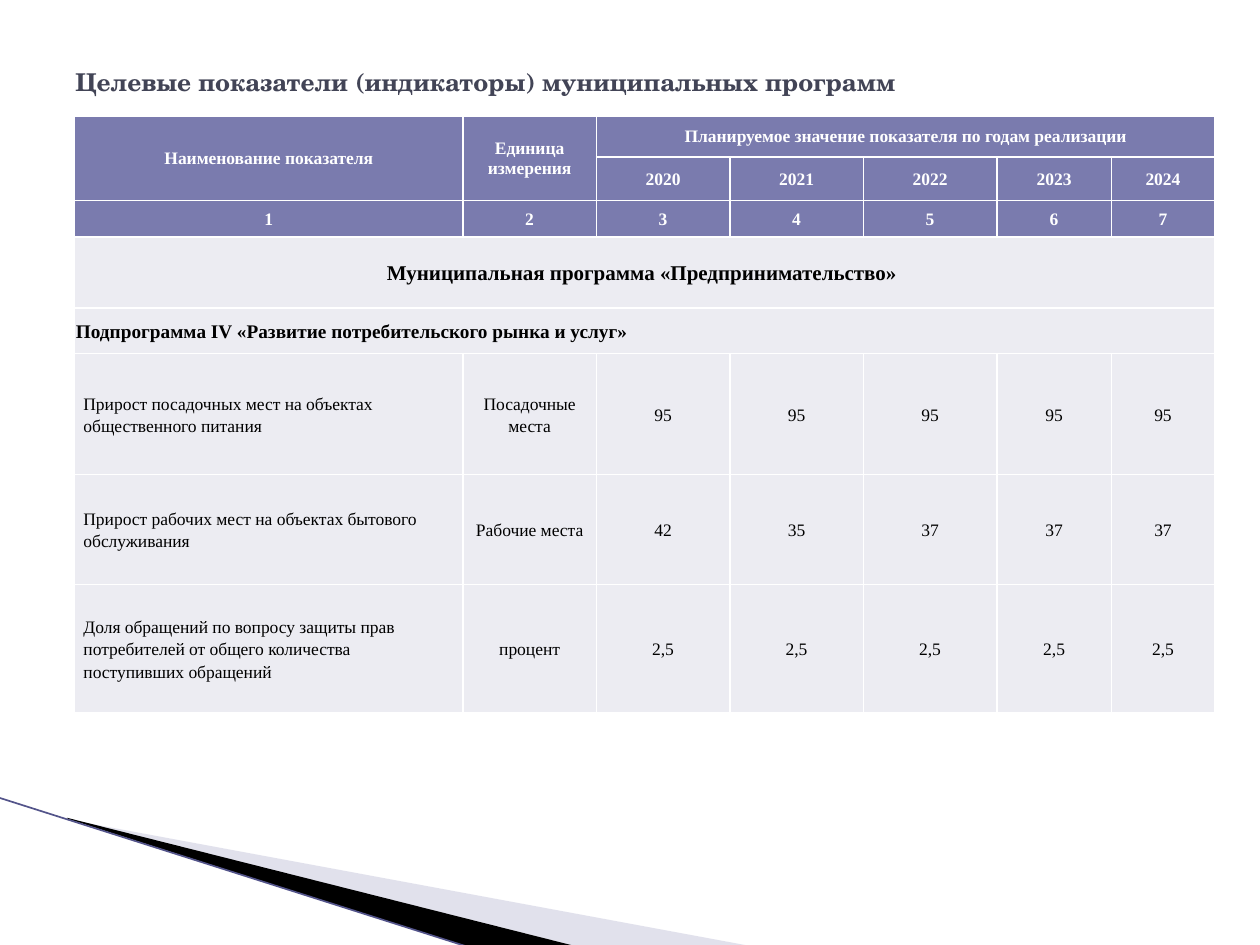
"""Build a slide with a table of target indicators for a municipal programme."""
from dataclasses import dataclass

from lxml import etree
from pptx import Presentation
from pptx import util as u
from pptx.dml.color import RGBColor
from pptx.enum import shapes, text
from pptx.oxml import ns


@dataclass(frozen=True)
class Theme:
    serif: str = "Times New Roman"
    display: str = "TeX Gyre Schola"
    title: str = "424456"
    head: str = "7A7BAE"
    pale: str = "ECECF2"
    white: str = "FFFFFF"
    black: str = "000000"
    wedge: str = "B6B6D1"
    edge: str = "53548A"
    large: float = 14
    mid: float = 12
    sub: float = 11
    small: float = 10


def add(root, tag, **attrs):
    return etree.SubElement(root, ns.qn(tag), attrs)


class Page:
    def __init__(self, slide, theme):
        self.slide, self.theme = slide, theme

    def style(self, para, size, color, bold=True, face=None):
        font = para.font
        font.name, font.size, font.bold = face or self.theme.serif, u.Pt(size), bold
        font.color.rgb = RGBColor.from_string(color)

    def title(self, words, left, top, width, height):
        box = self.slide.shapes.add_textbox(*map(u.Pt, (left, top, width, height)))
        frame = box.text_frame
        frame.word_wrap = True
        frame.vertical_anchor = text.MSO_ANCHOR.MIDDLE
        frame.text = words
        self.style(frame.paragraphs[0], self.theme.large, self.theme.title,
                   face=self.theme.display)

    def wedge(self, points, color, alpha=None):
        start, *rest = [(u.Pt(x), u.Pt(y)) for x, y in points]
        outline = self.slide.shapes.build_freeform(*start, scale=1)
        shape = outline.add_line_segments(rest, close=True).convert_to_shape()
        shape.shadow.inherit = False
        shape.line.fill.background()
        shape.fill.solid()
        shape.fill.fore_color.rgb = RGBColor.from_string(color)
        if alpha:
            tint = shape._element.spPr.find(".//" + ns.qn("a:srgbClr"))
            add(tint, "a:alpha", val=str(alpha * 1000))

    def line(self, start, end, color, width):
        rule = self.slide.shapes.add_connector(
            shapes.MSO_CONNECTOR.STRAIGHT, *map(u.Pt, start + end))
        rule.line.color.rgb = RGBColor.from_string(color)
        rule.line.width = u.Pt(width)
        add(rule._element.spPr, "a:effectLst")

    def table(self, left, top, widths, heights):
        frame = self.slide.shapes.add_table(
            len(heights), len(widths), u.Pt(left), u.Pt(top),
            u.Pt(sum(widths)), u.Pt(sum(heights)))
        grid = frame.table
        for col, width in zip(grid.columns, widths):
            col.width = u.Pt(width)
        for row, height in zip(grid.rows, heights):
            row.height = u.Pt(height)
        return grid

    def cell(self, cell, fill, body=False):
        side = 5 if body else 0.7
        cell.margin_left = cell.margin_right = u.Pt(side)
        cell.margin_top, cell.margin_bottom = u.Pt(0 if body else 0.7), 0
        cell.vertical_anchor = text.MSO_ANCHOR.MIDDLE
        props = cell._tc.get_or_add_tcPr()
        for edge in ("a:lnL", "a:lnR", "a:lnT", "a:lnB"):
            rule = add(props, edge, w=str(u.Pt(1)))
            add(add(rule, "a:solidFill"), "a:srgbClr", val=self.theme.white)
        cell.fill.solid()
        cell.fill.fore_color.rgb = RGBColor.from_string(fill)

    def label(self, cell, words, size, color, bold=True, left=False, body=False):
        cell.text = words
        para = cell.text_frame.paragraphs[0]
        para.alignment = text.PP_ALIGN.LEFT if left else text.PP_ALIGN.CENTER
        if body:
            para.line_spacing, para.space_after = 1.15, u.Pt(10)
        self.style(para, size, color, bold)


WIDTHS = [221.8, 76.3, 76.3, 76.3, 76.3, 65.5, 59]
HEIGHTS = [23.6, 23, 21, 40.6, 26, 69.2, 62.6, 73.6]
SPANS = [(0, 0, 1, 0), (0, 1, 1, 1), (0, 2, 0, 6), (3, 0, 3, 6), (4, 0, 4, 6)]
ROWS = [
    ["Наименование показателя", "Единица измерения",
     "Планируемое значение показателя по годам реализации"],
    ["", "", "2020", "2021", "2022", "2023", "2024"],
    ["1", "2", "3", "4", "5", "6", "7"],
    ["Муниципальная программа «Предпринимательство» "],
    ["Подпрограмма IV «Развитие потребительского рынка и услуг»"],
    ["Прирост посадочных мест на объектах общественного питания",
     "Посадочные места"] + ["95"] * 5,
    ["Прирост рабочих мест на объектах бытового обслуживания",
     "Рабочие места", "42", "35", "37", "37", "37"],
    ["Доля обращений по вопросу защиты прав потребителей от общего "
     "количества поступивших обращений", "процент"] + ["2,5"] * 5,
]


def main():
    deck = Presentation()
    deck.slide_width, deck.slide_height = u.Pt(720), u.Pt(540)
    theme = Theme()
    page = Page(deck.slides.add_slide(deck.slide_layouts[6]), theme)

    page.wedge([(39.6, 468.5), (428.4, 540.5), (328.3, 540.5), (39.6, 468)],
               theme.wedge, 40)
    page.wedge([(38.2, 467.3), (329, 540.7), (267.8, 541.2), (38.9, 468)],
               theme.black)
    page.line((-0.7, 455.8), (267.8, 541.2), theme.edge, 0.95)
    page.title("Целевые показатели (индикаторы) муниципальных программ",
               36, 21.6, 648, 49.7)

    grid = page.table(42.7, 66.2, WIDTHS, HEIGHTS)
    for top, left, low, right in SPANS:
        grid.cell(top, left).merge(grid.cell(low, right))
    sizes = {3: theme.mid, 4: theme.sub}
    for r in range(len(HEIGHTS)):
        head, body = r < 3, r > 4
        for c in range(len(WIDTHS)):
            page.cell(grid.cell(r, c), theme.head if head else theme.pale, body)
        for c, words in enumerate(ROWS[r]):
            if words:
                page.label(grid.cell(r, c), words, sizes.get(r, theme.small),
                           theme.white if head else theme.black,
                           bold=not body, left=r > 3 and c == 0, body=body)

    deck.save("out.pptx")


if __name__ == "__main__":
    main()
